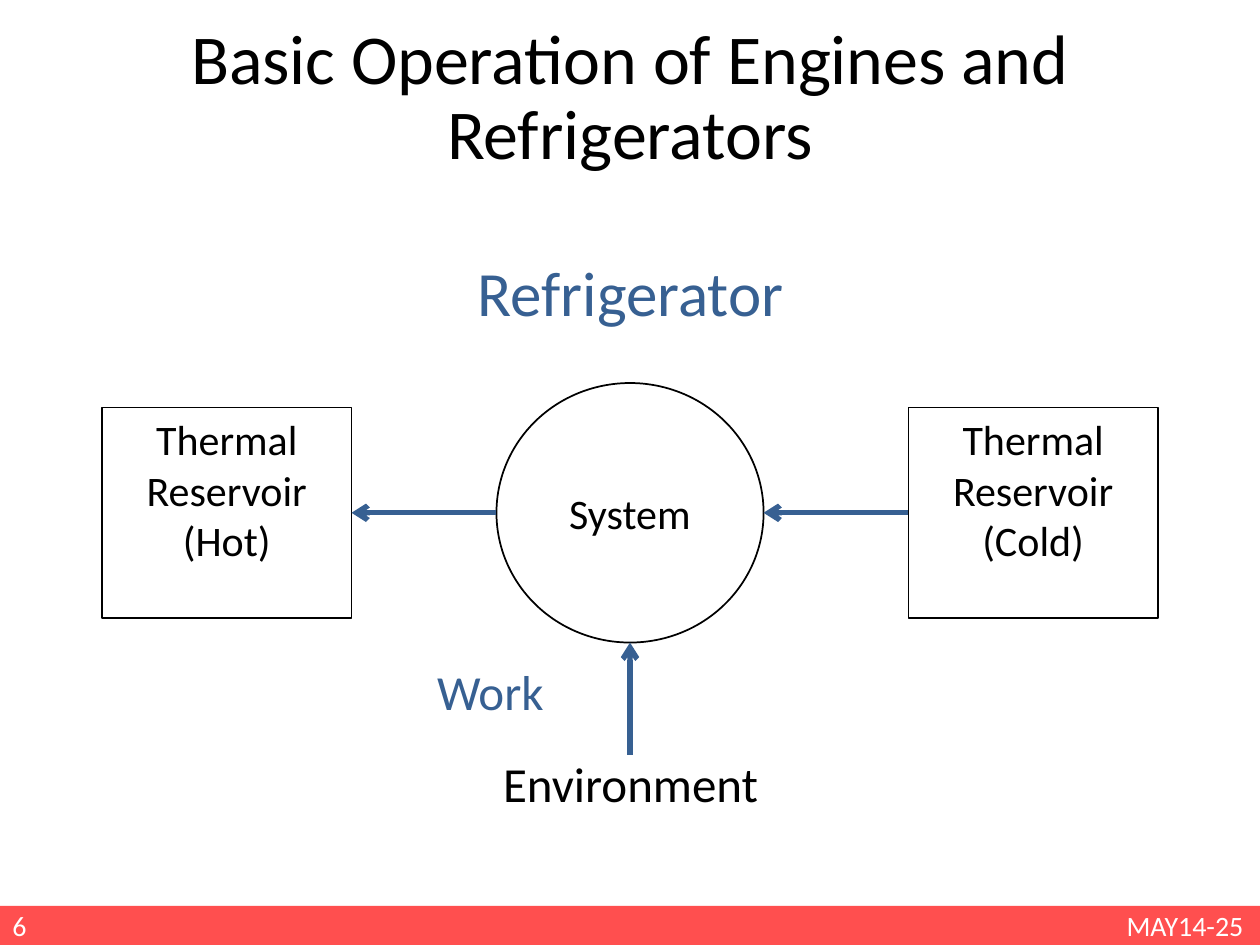
from dataclasses import dataclass

from lxml.etree import SubElement
from pptx import Presentation
from pptx.dml.color import RGBColor
from pptx.enum.shapes import MSO_CONNECTOR, MSO_SHAPE
from pptx.enum.text import MSO_ANCHOR, PP_ALIGN
from pptx.oxml.ns import qn
from pptx.util import Inches, Pt


@dataclass(frozen=True)
class Theme:
    font: str = "Calibri"
    ink: str = "000000"
    accent: str = "376092"
    footer: str = "FF4F4F"
    footer_ink: str = "FFFFFF"
    title_size: int = 40
    heading_size: int = 36
    label_size: int = 28
    body_size: int = 24
    footer_size: int = 16
    outline: int = 1
    arrow: int = 3


THEME = Theme()
COLUMNS, ROWS = 100, 75
SLIDE_WIDTH, SLIDE_HEIGHT = Inches(10), Inches(7.5)

# Diagram layout, in columns and rows
CENTER_X, CENTER_Y = 50, 40.7
SYSTEM_WIDTH, SYSTEM_HEIGHT = 21.2, 20.6
RESERVOIR_WIDTH, RESERVOIR_HEIGHT = 19.8, 16.7
RESERVOIR_OFFSET = 32
FOOTER_HEIGHT = 3.1
FOOTER_TOP = ROWS - FOOTER_HEIGHT


def across(columns):
    return round(SLIDE_WIDTH * columns / COLUMNS)


def down(rows):
    return round(SLIDE_HEIGHT * rows / ROWS)


def box(left, top, width, height):
    return across(left), down(top), across(width), down(height)


def centered(x, y, width, height):
    return box(x - width / 2, y - height / 2, width, height)


def write(shape, lines, size, color, align=PP_ALIGN.CENTER,
          anchor=MSO_ANCHOR.TOP, spacing=None):
    frame = shape.text_frame
    frame.word_wrap = True
    frame.vertical_anchor = anchor
    for index, line in enumerate(lines):
        paragraph = frame.add_paragraph() if index else frame.paragraphs[0]
        paragraph.alignment = align
        if spacing:
            paragraph.line_spacing = spacing
        run = paragraph.add_run()
        run.text = line
        run.font.name = THEME.font
        run.font.size = Pt(size)
        run.font.color.rgb = RGBColor.from_string(color)


def add_text(slide, area, text, size, color, **layout):
    write(slide.shapes.add_textbox(*area), [text], size, color, **layout)


def add_outline(slide, kind, area):
    shape = slide.shapes.add_shape(kind, *area)
    shape.shadow.inherit = False
    shape.fill.background()
    shape.line.color.rgb = RGBColor.from_string(THEME.ink)
    shape.line.width = Pt(THEME.outline)
    return shape


def add_reservoir(slide, x, name):
    area = centered(x, CENTER_Y, RESERVOIR_WIDTH, RESERVOIR_HEIGHT)
    shape = add_outline(slide, MSO_SHAPE.RECTANGLE, area)
    write(shape, ["Thermal", "Reservoir", f"({name})"], THEME.body_size, THEME.ink)


def add_arrow(slide, start, end):
    connector = slide.shapes.add_connector(
        MSO_CONNECTOR.STRAIGHT,
        across(start[0]), down(start[1]), across(end[0]), down(end[1]))
    connector.line.color.rgb = RGBColor.from_string(THEME.accent)
    connector.line.width = Pt(THEME.arrow)
    SubElement(connector.line._get_or_add_ln(), qn("a:tailEnd"), type="arrow")
    SubElement(connector._element.spPr, qn("a:effectLst"))


def add_footer(slide):
    bar = slide.shapes.add_shape(
        MSO_SHAPE.RECTANGLE, *box(0, FOOTER_TOP, COLUMNS, FOOTER_HEIGHT))
    bar.shadow.inherit = False
    bar.fill.solid()
    bar.fill.fore_color.rgb = RGBColor.from_string(THEME.footer)
    bar.line.fill.background()
    date_width = 11.9
    for left, width, text, align in (
            (0, 4.8, "6", PP_ALIGN.LEFT),
            (COLUMNS - date_width, date_width, "MAY14-25", PP_ALIGN.CENTER)):
        add_text(slide, box(left, FOOTER_TOP, width, FOOTER_HEIGHT), text,
                 THEME.footer_size, THEME.footer_ink,
                 align=align, anchor=MSO_ANCHOR.MIDDLE)


def add_diagram(slide):
    # System and its two reservoirs
    add_outline(slide, MSO_SHAPE.OVAL,
                centered(CENTER_X, CENTER_Y, SYSTEM_WIDTH, SYSTEM_HEIGHT))
    add_text(slide, centered(CENTER_X, CENTER_Y, 15.6, 5), "System",
             THEME.body_size, THEME.ink)
    add_reservoir(slide, CENTER_X - RESERVOIR_OFFSET, "Hot")
    add_reservoir(slide, CENTER_X + RESERVOIR_OFFSET, "Cold")

    # Heat flows from cold to hot, work flows in from below
    system_edge = SYSTEM_WIDTH / 2
    reservoir_edge = RESERVOIR_OFFSET - RESERVOIR_WIDTH / 2
    add_arrow(slide, (CENTER_X - system_edge, CENTER_Y),
              (CENTER_X - reservoir_edge, CENTER_Y))
    add_arrow(slide, (CENTER_X + reservoir_edge, CENTER_Y),
              (CENTER_X + system_edge, CENTER_Y))
    add_arrow(slide, (CENTER_X, 59.9),
              (CENTER_X, CENTER_Y + SYSTEM_HEIGHT / 2))

    # Labels
    add_text(slide, box(31.8, 19.6, 36.5, 9), "Refrigerator",
             THEME.heading_size, THEME.accent)
    add_text(slide, box(33.7, 52, 12.5, 5.7), "Work",
             THEME.label_size, THEME.accent, align=PP_ALIGN.LEFT)
    add_text(slide, box(36.2, 59.3, 27.7, 5.7), "Environment",
             THEME.label_size, THEME.ink)


def main():
    presentation = Presentation()
    presentation.slide_width = SLIDE_WIDTH
    presentation.slide_height = SLIDE_HEIGHT
    slide = presentation.slides.add_slide(presentation.slide_layouts[6])
    add_footer(slide)
    add_text(slide, box(5, 2.4, 90, 11),
             "Basic Operation of Engines and Refrigerators",
             THEME.title_size, THEME.ink,
             anchor=MSO_ANCHOR.MIDDLE, spacing=0.9)
    add_diagram(slide)
    presentation.save("out.pptx")


if __name__ == "__main__":
    main()
